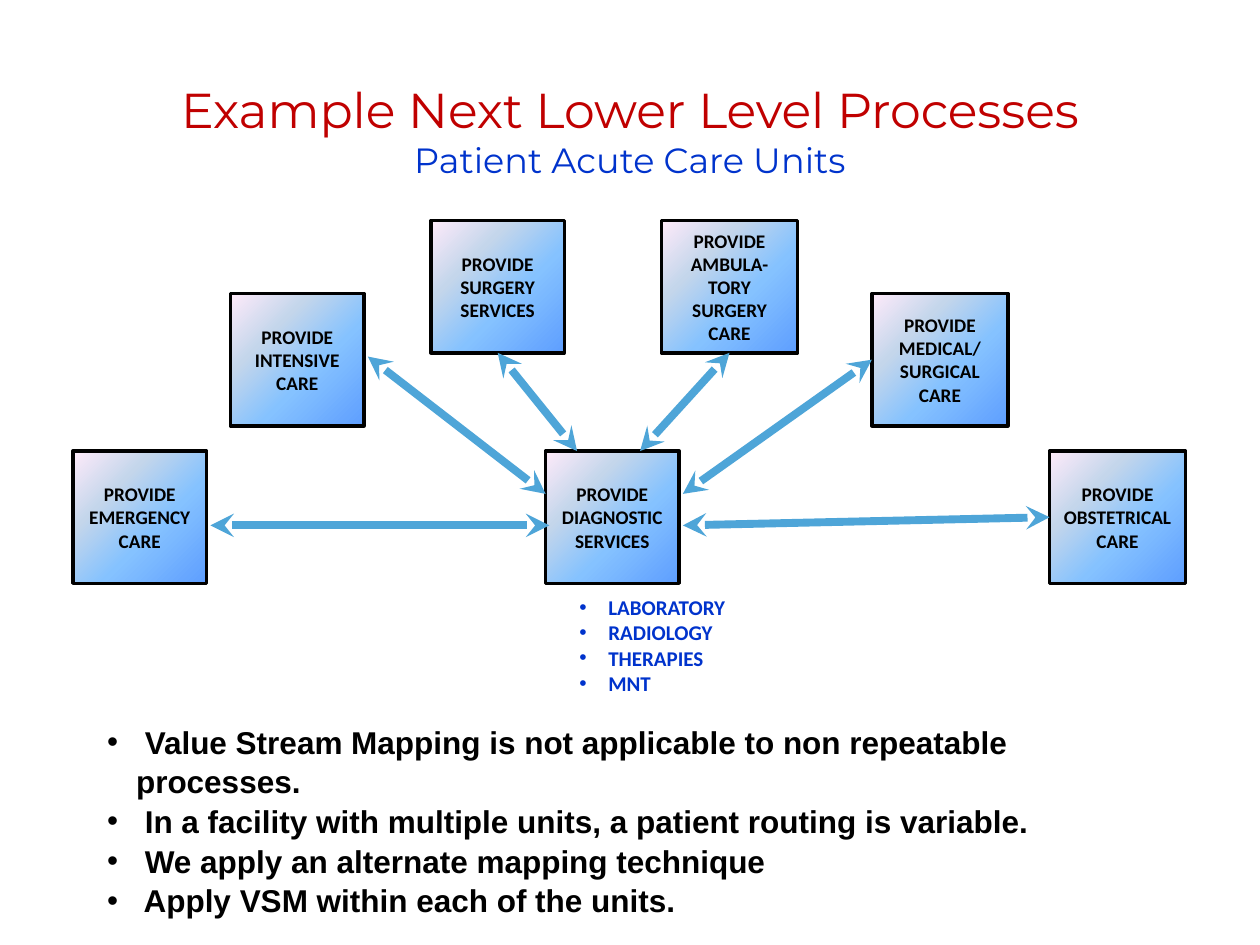
"""Build the slide on next lower level processes of patient acute care units."""
from dataclasses import dataclass
from typing import Optional

from lxml import etree
from pptx import Presentation
from pptx.dml.color import RGBColor
from pptx.enum.shapes import MSO_CONNECTOR, MSO_SHAPE
from pptx.enum.text import MSO_ANCHOR, MSO_AUTO_SIZE, PP_ALIGN
from pptx.oxml.ns import qn
from pptx.util import Inches, Pt

RECT, STRAIGHT = MSO_SHAPE.RECTANGLE, MSO_CONNECTOR.STRAIGHT
TOP, MIDDLE = MSO_ANCHOR.TOP, MSO_ANCHOR.MIDDLE
CENTER, LEFT = PP_ALIGN.CENTER, PP_ALIGN.LEFT
BOTTOM_SITE, LEFT_SITE = 2, 1
COLORS = {"title": "C00000", "accent": "0033CC", "text": "000000", "arrow": "4EA5D8"}
GRADIENT = {0: "5E9EFF", 40: "85C2FF", 70: "C4D6EB", 100: "FFEBFA"}
BOX_HEIGHT, INDENT = 1.05, 0.23


@dataclass
class Unit:
    """A process box."""
    name: str
    left: float
    top: float
    width: float
    text: str


@dataclass
class Arrow:
    """A double arrow, optionally joined to the side of a unit."""
    x1: float
    y1: float
    x2: float
    y2: float
    unit: Optional[str] = None
    site: int = LEFT_SITE
    at_begin: bool = False


UNITS = [
    Unit("emergency", 0.58, 3.58, 1.06, "PROVIDE\nEMERGENCY\nCARE"),
    Unit("intensive", 1.83, 2.33, 1.06, "PROVIDE\nINTENSIVE\nCARE"),
    Unit("surgery", 3.42, 1.75, 1.06, "PROVIDE\nSURGERY\nSERVICES"),
    Unit("ambulatory", 5.25, 1.75, 1.08, "PROVIDE\nAMBULA-\nTORY\nSURGERY CARE"),
    Unit("medical", 6.92, 2.33, 1.08, "PROVIDE\nMEDICAL/\nSURGICAL CARE"),
    Unit("obstetrical", 8.33, 3.58, 1.08, "PROVIDE\nOBSTETRICAL\nCARE"),
    Unit("diagnostic", 4.33, 3.58, 1.06, "PROVIDE\nDIAGNOSTIC\nSERVICES"),
]
ARROWS = [
    Arrow(1.67, 4.17, 4.36, 4.17),
    Arrow(2.92, 2.83, 4.33, 3.92),
    Arrow(3.94, 2.8, 4.58, 3.58, "surgery", BOTTOM_SITE, True),
    Arrow(5.79, 2.8, 5.08, 3.58, "ambulatory", BOTTOM_SITE, True),
    Arrow(5.42, 3.92, 6.92, 2.86, "medical"),
    Arrow(5.42, 4.17, 8.33, 4.11, "obstetrical"),
]
SERVICES = "LABORATORY\nRADIOLOGY\nTHERAPIES\nMNT"
NOTES = "\n".join([
    " Value Stream Mapping is not applicable to non repeatable processes.",
    " In a facility with multiple units, a patient routing is variable.",
    " We apply an alternate mapping technique",
    " Apply VSM within each of the units.",
])


def rgb(key: str) -> RGBColor:
    """Return a named colour."""
    return RGBColor.from_string(COLORS[key])


def place(shape, left: float, top: float, width: float, height: float) -> None:
    """Position a shape in inches."""
    shape.left, shape.top = Inches(left), Inches(top)
    shape.width, shape.height = Inches(width), Inches(height)


def style_run(r, font: str, size: float, color: str, bold: bool = False) -> None:
    """Format one run."""
    r.font.name, r.font.size, r.font.bold = font, Pt(size), bold
    r.font.color.rgb = rgb(color)


def fill_text(tf, text: str, font: str, size: float, color: str, align) -> None:
    """Write bold paragraphs in one style."""
    tf.text = text
    tf.word_wrap = True
    for p in tf.paragraphs:
        p.alignment = align
        for r in p.runs:
            style_run(r, font, size, color, True)


def add_bullets(tf, spacing: float) -> None:
    """Give every paragraph a hanging bullet and tight spacing."""
    for p in tf.paragraphs:
        p.line_spacing, p.space_before = spacing, Pt(0)
        pPr = p._p.get_or_add_pPr()
        pPr.set("marL", str(Inches(INDENT)))
        pPr.set("indent", str(-Inches(INDENT)))
        etree.SubElement(pPr, qn("a:buFont")).set("typeface", "Arial")
        etree.SubElement(pPr, qn("a:buChar")).set("char", "•")


def add_unit(slide, unit: Unit):
    """Draw one process box with its diagonal gradient."""
    s = slide.shapes.add_shape(RECT, Inches(unit.left), Inches(unit.top),
                               Inches(unit.width), Inches(BOX_HEIGHT))
    s.shadow.inherit = False
    s.fill.gradient()
    s.fill.gradient_angle = 135
    stops = s._element.spPr.find(".//" + qn("a:gsLst"))
    for old in list(stops):
        stops.remove(old)
    for position, color in GRADIENT.items():
        stop = etree.SubElement(stops, qn("a:gs"), pos=str(position * 1000))
        etree.SubElement(stop, qn("a:srgbClr"), val=color)
    s.line.color.rgb = rgb("text")
    s.line.width = Pt(2)
    s.text_frame.vertical_anchor = MIDDLE
    fill_text(s.text_frame, unit.text, "Calibri", 11, "text", CENTER)
    return s


def add_arrow(slide, arrow: Arrow, boxes: dict) -> None:
    """Draw one double-headed arrow."""
    c = slide.shapes.add_connector(STRAIGHT, Inches(arrow.x1), Inches(arrow.y1),
                                   Inches(arrow.x2), Inches(arrow.y2))
    if arrow.unit:
        join = c.begin_connect if arrow.at_begin else c.end_connect
        join(boxes[arrow.unit], arrow.site)
    c.line.color.rgb = rgb("arrow")
    c.line.width = Pt(4.5)
    ln = c.line._get_or_add_ln()
    for end in ("a:headEnd", "a:tailEnd"):
        etree.SubElement(ln, qn(end), type="stealth")
    etree.SubElement(c._element.spPr, qn("a:effectLst"))


def main() -> None:
    """Build and save the slide."""
    prs = Presentation()
    prs.slide_width, prs.slide_height = Inches(10), Inches(7.5)
    slide = prs.slides.add_slide(prs.slide_layouts[1])

    title = slide.shapes.title
    place(title, 0.5, 0.58, 9, 1.08)
    tf = title.text_frame
    tf.text = "Example Next Lower Level Processes\vPatient Acute Care Units"
    tf.vertical_anchor, tf.auto_size = TOP, MSO_AUTO_SIZE.NONE
    p = tf.paragraphs[0]
    p.alignment = CENTER
    style_run(p.runs[0], "Montserrat", 28, "title")
    style_run(p.runs[1], "Montserrat", 20, "accent")

    boxes = {unit.name: add_unit(slide, unit) for unit in UNITS}
    for arrow in ARROWS:
        add_arrow(slide, arrow, boxes)

    services = slide.shapes.add_textbox(Inches(4.5), Inches(4.67), Inches(1.92), Inches(0.91))
    fill_text(services.text_frame, SERVICES, "Calibri", 12, "accent", LEFT)
    add_bullets(services.text_frame, 1.0)

    notes = slide.placeholders[1]
    place(notes, 0.75, 5.67, 8.59, 1.31)
    notes.text_frame.auto_size = MSO_AUTO_SIZE.NONE
    fill_text(notes.text_frame, NOTES, "Arial", 18, "text", LEFT)
    add_bullets(notes.text_frame, 1.05)

    prs.save("out.pptx")


if __name__ == "__main__":
    main()
